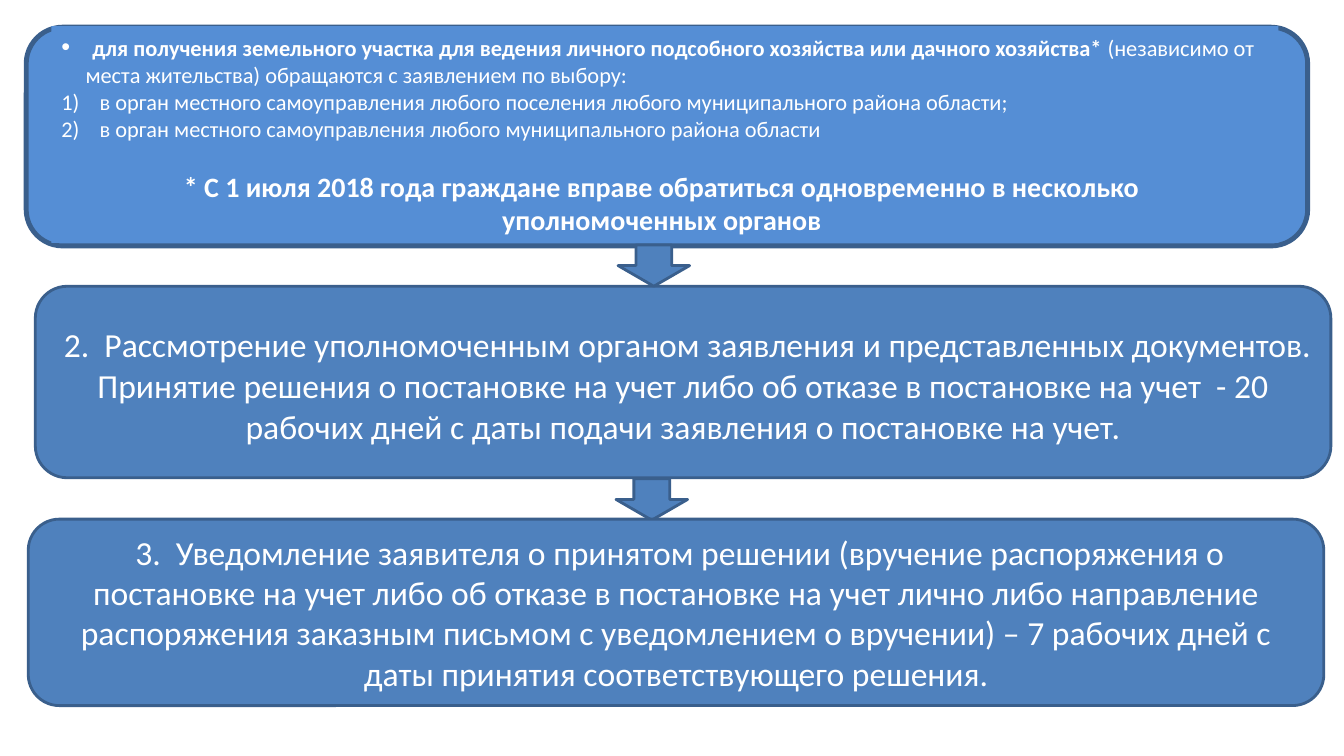
from lxml import etree
from pptx import Presentation, util as u
from pptx.dml.color import RGBColor
from pptx.enum import shapes, text
from pptx.oxml.ns import qn

PX = 9144  # 100 px to the inch
SIZE = (1333, 750)
WHITE, SKY, BLUE, EDGE = "FFFFFF", "558ED5", "4F81BD", "3A5F8C"
ROUND = shapes.MSO_SHAPE.ROUNDED_RECTANGLE
RECT = shapes.MSO_SHAPE.RECTANGLE
ARROW = shapes.MSO_SHAPE.DOWN_ARROW
LEFT, MID = text.PP_ALIGN.LEFT, text.PP_ALIGN.CENTER
TOP, CENTER = text.MSO_ANCHOR.TOP, text.MSO_ANCHOR.MIDDLE
DOT = ("buChar", {"char": "•"})
NUM = ("buAutoNum", {"type": "arabicParenR"})

# paragraph: align, hanging indent px, bullet, space before pt, runs
# run: text, size, bold, font
APPLY = [
    (LEFT, 24, DOT, 0, [
        (" ", 18, False, "Arial"),
        ("для получения земельного участка для ведения личного подсобного "
         "хозяйства или дачного хозяйства*", 16, True, "Calibri"),
        (" (независимо от места жительства) обращаются с заявлением "
         "по выбору:", 16, False, "Calibri")]),
    (LEFT, 38, NUM, 0, [
        ("в орган местного самоуправления любого поселения любого "
         "муниципального района области;", 16, False, "Calibri")]),
    (LEFT, 38, NUM, 0, [
        ("в орган местного самоуправления любого муниципального района "
         "области", 16, False, "Calibri")]),
    (MID, 38, None, 19.5, [
        ("* С 1 июля 2018 года граждане вправе обратиться одновременно "
         "в несколько ", 20, True, "Calibri")]),
    (MID, 38, None, 0, [
        ("уполномоченных органов ", 20, True, "Calibri")]),
]
REVIEW = [(MID, 0, None, 0, [
    (" ", 28, False, "Calibri"),
    ("2.  Рассмотрение уполномоченным органом заявления и представленных "
     "документов. Принятие решения о постановке на учет либо об отказе в "
     "постановке на учет  - 20 рабочих дней с даты подачи заявления о "
     "постановке на учет.", 24, False, "Calibri")])]
NOTICE = [(MID, 0, None, 0, [
    (" 3.  Уведомление заявителя о принятом решении (вручение распоряжения "
     "о постановке на учет либо об отказе в постановке на учет лично либо "
     "направление распоряжения заказным письмом с уведомлением о вручении) "
     "– 7 рабочих дней с даты принятия соответствующего решения.",
     24, False, "Calibri")])]

# kind, (left, top, width, height), fill, line pt, anchor, paragraphs
PARTS = [
    (ROUND, (26, 27, 1271, 217), SKY, 3.5, CENTER, []),
    (RECT, (51, 26, 1217, 215), SKY, 0, TOP, APPLY),
    (ROUND, (35, 284, 1285, 190), BLUE, 2, CENTER, REVIEW),
    (ARROW, (613, 243, 71, 41), BLUE, 2, CENTER, []),
    (ARROW, (611, 475, 71, 41), BLUE, 2, CENTER, []),
    (ROUND, (28, 515, 1285, 185), BLUE, 2, CENTER, NOTICE),
]


def paint(fill, color):
    fill.solid()
    fill.fore_color.rgb = RGBColor.from_string(color)


def write(para, align, hang, mark, gap, runs):
    para.alignment = align
    para.space_before = u.Pt(gap)
    props = para._p.get_or_add_pPr()
    if hang:
        props.set("marL", str(hang * PX))
        props.set("indent", str(-hang * PX))
    if mark:
        tag, attrs = mark
        etree.SubElement(props, qn("a:buFont"), typeface="Arial")
        etree.SubElement(props, qn("a:" + tag), attrs)
    for words, size, bold, face in runs:
        run = para.add_run()
        run.text = words
        font = run.font
        font.size, font.bold, font.name = u.Pt(size), bold, face
        paint(font.fill, WHITE)


def draw(slide, kind, box, fill, line, anchor, paras):
    shape = slide.shapes.add_shape(kind, *(n * PX for n in box))
    shape.shadow.inherit = False
    paint(shape.fill, fill)
    if line:
        paint(shape.line.fill, EDGE)
        shape.line.width = u.Pt(line)
    else:
        shape.line.fill.background()
    frame = shape.text_frame
    frame.word_wrap = True
    frame.vertical_anchor = anchor
    for i, item in enumerate(paras):
        para = frame.add_paragraph() if i else frame.paragraphs[0]
        write(para, *item)


def main():
    deck = Presentation()
    deck.slide_width, deck.slide_height = (n * PX for n in SIZE)
    slide = deck.slides.add_slide(deck.slide_layouts[6])
    for part in PARTS:
        draw(slide, *part)
    deck.save("out.pptx")


if __name__ == "__main__":
    main()
